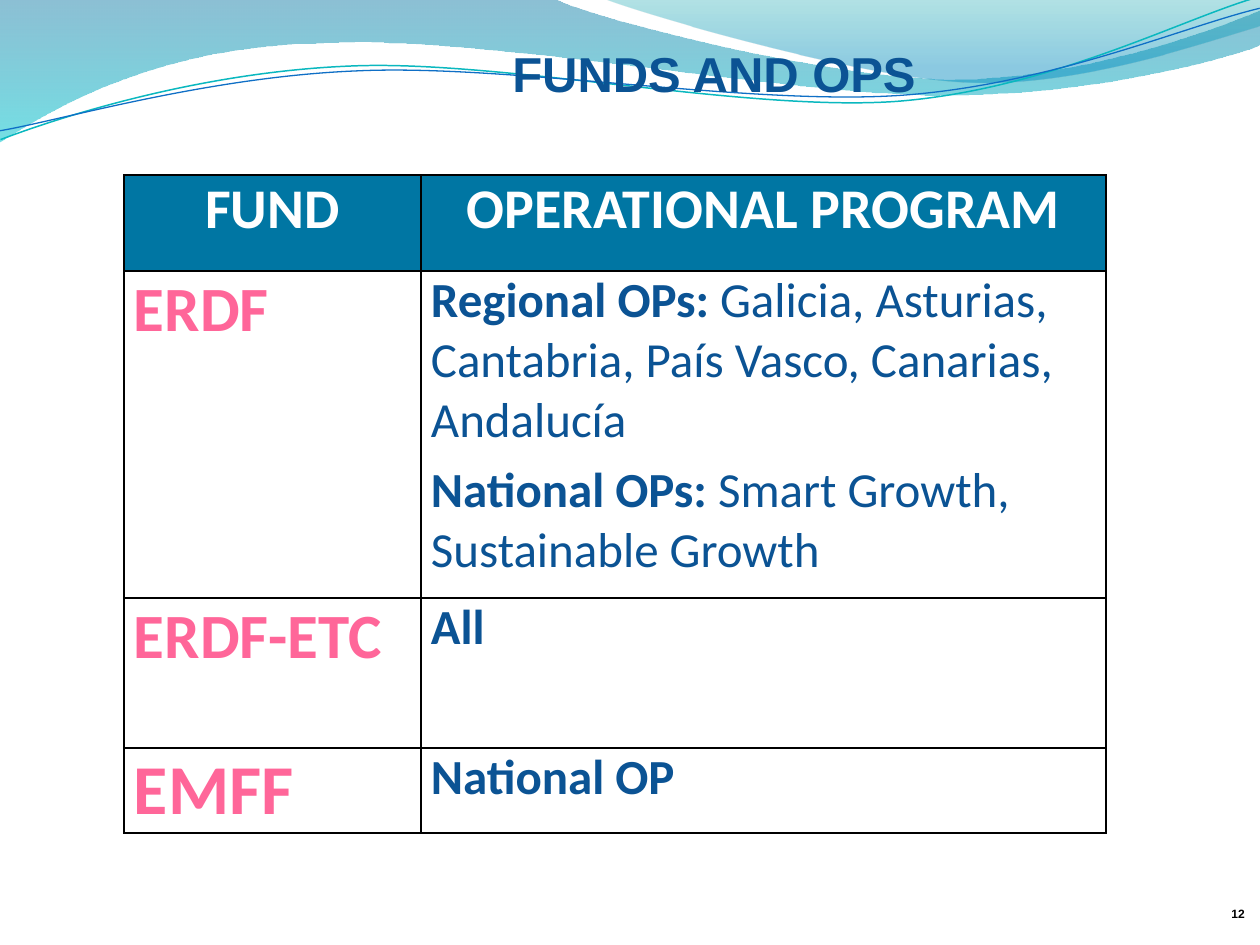
from lxml.etree import SubElement
from pptx import Presentation
from pptx.dml.color import RGBColor
from pptx.enum.text import MSO_ANCHOR as Anchor, MSO_AUTO_SIZE as AutoSize, PP_ALIGN as Align
from pptx.oxml.ns import qn
from pptx.util import Pt

EMU_PER_PX = 914400 / 126
SUBPIXELS = 100
COLORS = {
    "navy": "0B5394", "pink": "FF6699", "header": "0076A3",
    "white": "FFFFFF", "black": "000000",
    "deep": "0074A1", "aqua": "00C6CF", "teal": "00A1A9", "sky": "008BBF",
    "teal_line": "0AB8BF", "blue_line": "0F6FC6",
}


def px(length):
    return round(length * EMU_PER_PX)


def rgb(name):
    return RGBColor.from_string(COLORS[name])


class SlideBuilder:
    def __init__(self, slide):
        self.slide = slide
        self.shapes = slide.shapes

    def add_run(self, paragraph, text, size, color, bold=True, face="Calibri"):
        run = paragraph.add_run()
        run.text = text
        run.font.size, run.font.bold, run.font.name = Pt(size), bold, face
        run.font.color.rgb = rgb(color)
        return run

    def prepare_frame(self, frame, anchor):
        frame.margin_left = frame.margin_right = frame.margin_top = frame.margin_bottom = 0
        frame.word_wrap, frame.auto_size = True, AutoSize.NONE
        frame.vertical_anchor = anchor

    def outline(self, start, segments, close):
        """Draw lines (2 numbers) and cubic curves (6 numbers) from start."""
        ends = [start] + [segment[-2:] for segment in segments]
        builder = self.shapes.build_freeform(start[0] * SUBPIXELS, start[1] * SUBPIXELS,
                                             scale=EMU_PER_PX / SUBPIXELS)
        builder.add_line_segments([(x * SUBPIXELS, y * SUBPIXELS) for x, y in ends[1:]],
                                  close=close)
        shape = builder.convert_to_shape()
        shape.shadow.inherit = False

        left, top = (min(values) for values in zip(*ends))
        path = next(shape._element.iter(qn("a:path")))
        for line, segment in zip(path.findall(qn("a:lnTo")), segments):
            if len(segment) == 2:
                continue
            curve = SubElement(path, qn("a:cubicBezTo"))
            for x, y in zip(segment[::2], segment[1::2]):
                SubElement(curve, qn("a:pt"), x=str(round((x - left) * SUBPIXELS)),
                           y=str(round((y - top) * SUBPIXELS)))
            path.replace(line, curve)
        return shape

    def wave(self, start, segments, stops):
        """Fill a closed outline from top to bottom; a stop is position, colour, opacity %."""
        shape = self.outline(start, segments, True)
        shape.line.fill.background()
        shape.fill.gradient()
        shape.fill.gradient_angle = 270
        for stop, (position, color, opacity) in zip(shape.fill.gradient_stops, stops):
            stop.position = position
            stop.color.rgb = rgb(color)
            color_node = stop._gs.find(qn("a:srgbClr"))
            SubElement(color_node, qn("a:alpha"), val=str(opacity * 1000))

    def strand(self, start, segments, color, width):
        shape = self.outline(start, segments, False)
        shape.rotation = 357.3
        shape.fill.background()
        shape.line.color.rgb = rgb(color)
        shape.line.width = Pt(width)

    def title(self, text, left, top, width, height):
        heading = self.shapes.title
        self.shapes._spTree.append(heading._element)  # in front of the waves
        heading.left, heading.top = px(left), px(top)
        heading.width, heading.height = px(width), px(height)
        self.prepare_frame(heading.text_frame, Anchor.MIDDLE)
        paragraph = heading.text_frame.paragraphs[0]
        paragraph.alignment = Align.CENTER
        self.add_run(paragraph, text, 28, "navy", face="Arial")

    def page_number(self, text, left, top, width, height):
        box = self.shapes.add_textbox(px(left), px(top), px(width), px(height))
        self.prepare_frame(box.text_frame, Anchor.BOTTOM)
        paragraph = box.text_frame.paragraphs[0]
        paragraph.alignment = Align.RIGHT
        number = self.add_run(paragraph, text, 12, "black", face="Arial")
        number.font._element.set("baseline", "30000")

    def border(self, cell):
        properties = cell._tc.get_or_add_tcPr()
        for side in ("lnL", "lnR", "lnT", "lnB"):
            line = SubElement(properties, qn(f"a:{side}"), w=str(Pt(1)))
            fill = SubElement(line, qn("a:solidFill"))
            SubElement(fill, qn("a:srgbClr"), val=COLORS["black"])

    def fill_cell(self, cell, paragraphs, align, before, fill=None):
        self.border(cell)
        if fill:
            cell.fill.solid()
            cell.fill.fore_color.rgb = rgb(fill)
        else:
            cell.fill.background()
        cell.margin_left = cell.margin_right = px(10)
        cell.margin_top = cell.margin_bottom = 0
        frame = cell.text_frame
        for index, runs in enumerate(paragraphs):
            paragraph = frame.add_paragraph() if index else frame.paragraphs[0]
            paragraph.alignment = align
            paragraph.space_before, paragraph.space_after = Pt(before), Pt(3)
            for text, size, color, bold in runs:
                self.add_run(paragraph, text, size, color, bold)

    def fund_table(self, left, top, widths, heights, headers, funds):
        table = self.shapes.add_table(len(heights), len(widths), px(left), px(top),
                                      px(sum(widths)), px(sum(heights))).table
        table.first_row = table.horz_banding = False
        for column, width in zip(table.columns, widths):
            column.width = px(width)
        for row, height in zip(table.rows, heights):
            row.height = px(height)
        for index, header in enumerate(headers):
            self.fill_cell(table.cell(0, index), [[(header, 32, "white", True)]],
                           Align.CENTER, 6, "header")
        for index, (fund, size, programs) in enumerate(funds, start=1):
            self.fill_cell(table.cell(index, 0), [[(fund, size, "pink", True)]],
                           Align.JUSTIFY, 3)
            lines = [[(text, 28, "navy", bold) for text, bold in line] for line in programs]
            self.fill_cell(table.cell(index, 1), lines,
                           Align.LEFT if len(lines) > 1 else Align.JUSTIFY, 3)


def main():
    deck = Presentation()
    deck.slide_width, deck.slide_height = px(1260), px(945)
    page = SlideBuilder(deck.slides.add_slide(deck.slide_layouts[5]))

    page.wave((0, 0), [(554, -1), (600, 21, 837, 79, 955, 79),
                       (1075, 79, 1207, 33, 1260, 11), (1261, 45),
                       (1239, 55, 1096, 96, 940, 95), (784, 95, 481, 35, 324, 43),
                       (163, 45, 58, 105, -1, 142), (0, 0)],
              [(0, "deep", 45), (1, "aqua", 55)])
    page.wave((604, -1), [(641, 14, 859, 78, 969, 82),
                          (1079, 87, 1211, 40, 1260, 26), (1260, 0), (604, -1)],
              [(0, "teal", 30), (0.8, "sky", 45)])
    page.strand((-2, 110), [(59, 90, 200, 52, 350, 53), (499, 53, 745, 118, 896, 114),
                            (1049, 109, 1184, 45, 1260, 27)], "teal_line", 0.85)
    page.strand((-2, 101), [(57, 94, 207, 57, 357, 58), (509, 58, 750, 112, 902, 108),
                            (1052, 104, 1187, 52, 1262, 38)], "blue_line", 0.75)

    page.title("FUNDS AND OPS", 362, 19, 704, 107)
    page.page_number("12", 1186, 889, 59, 40)

    funds = [
        ("ERDF", 36, [
            [("Regional OPs:", True),
             (" Galicia, Asturias, Cantabria, País Vasco, Canarias, Andalucía", False)],
            [("National OPs: ", True), ("Smart Growth, Sustainable Growth", False)],
        ]),
        ("ERDF-ETC", 36, [[("All", True)]]),
        ("EMFF", 40, [[("National OP", True)]]),
    ]
    page.fund_table(124, 175, [297, 685], [96, 327, 150, 72],
                    ["FUND", "OPERATIONAL PROGRAM"], funds)
    deck.save("out.pptx")


if __name__ == "__main__":
    main()
